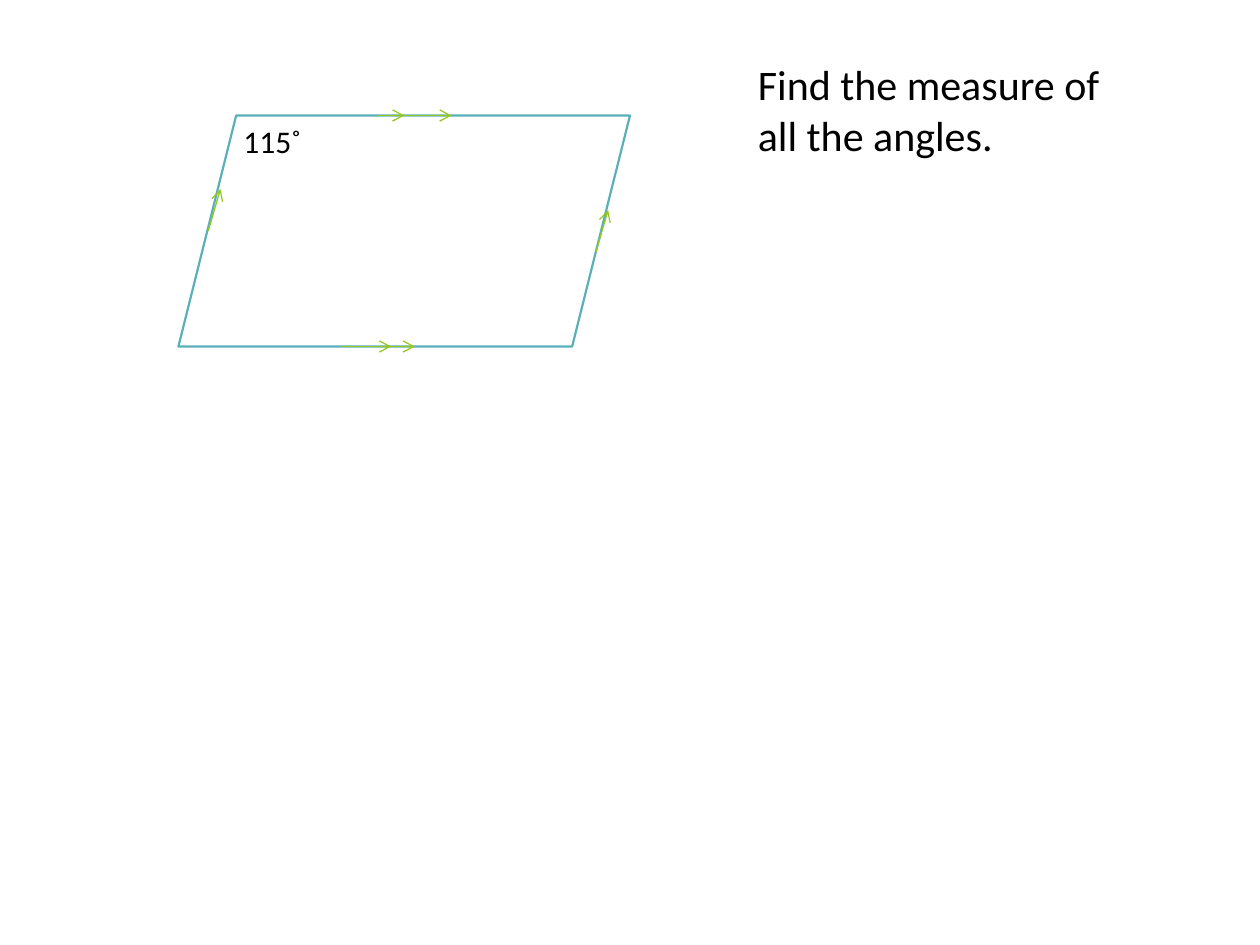
from lxml import etree
from pptx import Presentation
from pptx.dml.color import RGBColor
from pptx.enum.shapes import MSO_CONNECTOR, MSO_SHAPE
from pptx.enum.text import MSO_AUTO_SIZE
from pptx.oxml.ns import qn
from pptx.util import Pt

LINE = MSO_CONNECTOR.STRAIGHT
SLANTED = MSO_SHAPE.PARALLELOGRAM
GROW = MSO_AUTO_SIZE.SHAPE_TO_FIT_TEXT
COLORS = {"paper": "FFFFFF", "side": "59B0B9", "mark": "96C71E", "ink": "000000"}


def color(name):
    return RGBColor.from_string(COLORS[name])


def add_text(text, left, top, width, height, size=18, font="Calibri", ink="ink"):
    box = slide.shapes.add_textbox(Pt(left), Pt(top), Pt(width), Pt(height))
    frame = box.text_frame
    frame.word_wrap = True
    frame.auto_size = GROW
    run = frame.paragraphs[0].add_run()
    run.text = text
    run.font.size = Pt(size)
    run.font.name = font
    run.font.color.rgb = color(ink)


deck = Presentation()
deck.slide_width, deck.slide_height = Pt(720), Pt(540)
slide = deck.slides.add_slide(deck.slide_layouts[6])

# Parallelogram
left, top, width, height = 102, 66, 258, 132
base = top + height
figure = slide.shapes.add_shape(SLANTED, Pt(left), Pt(top), Pt(width), Pt(height))
figure.shadow.inherit = False
figure.fill.solid()
figure.fill.fore_color.rgb = color("paper")
figure.line.color.rgb = color("side")
figure.line.width = Pt(1.25)

# Arrows that mark the parallel sides: x1, y1, x2, y2
marks = [
    (119, 132, 126, 108),
    (340.5, 144, 347.5, 120),
    (216, top, 258, top),
    (195, base, 237, base),
    (216, top, 231, top),
    (208.5, base, 223.5, base),
]
for ends in marks:
    mark = slide.shapes.add_connector(LINE, *[Pt(end) for end in ends])
    mark.line.color.rgb = color("mark")
    mark.line.width = Pt(0.75)
    etree.SubElement(mark.line._get_or_add_ln(), qn("a:tailEnd"), type="arrow")
    etree.SubElement(mark._element.spPr, qn("a:effectLst"))

add_text("115˚", 132, top, 57, 29)
add_text("Find the measure of all the angles.", 426, 30, 228, 65.5, size=24)

deck.save("out.pptx")
